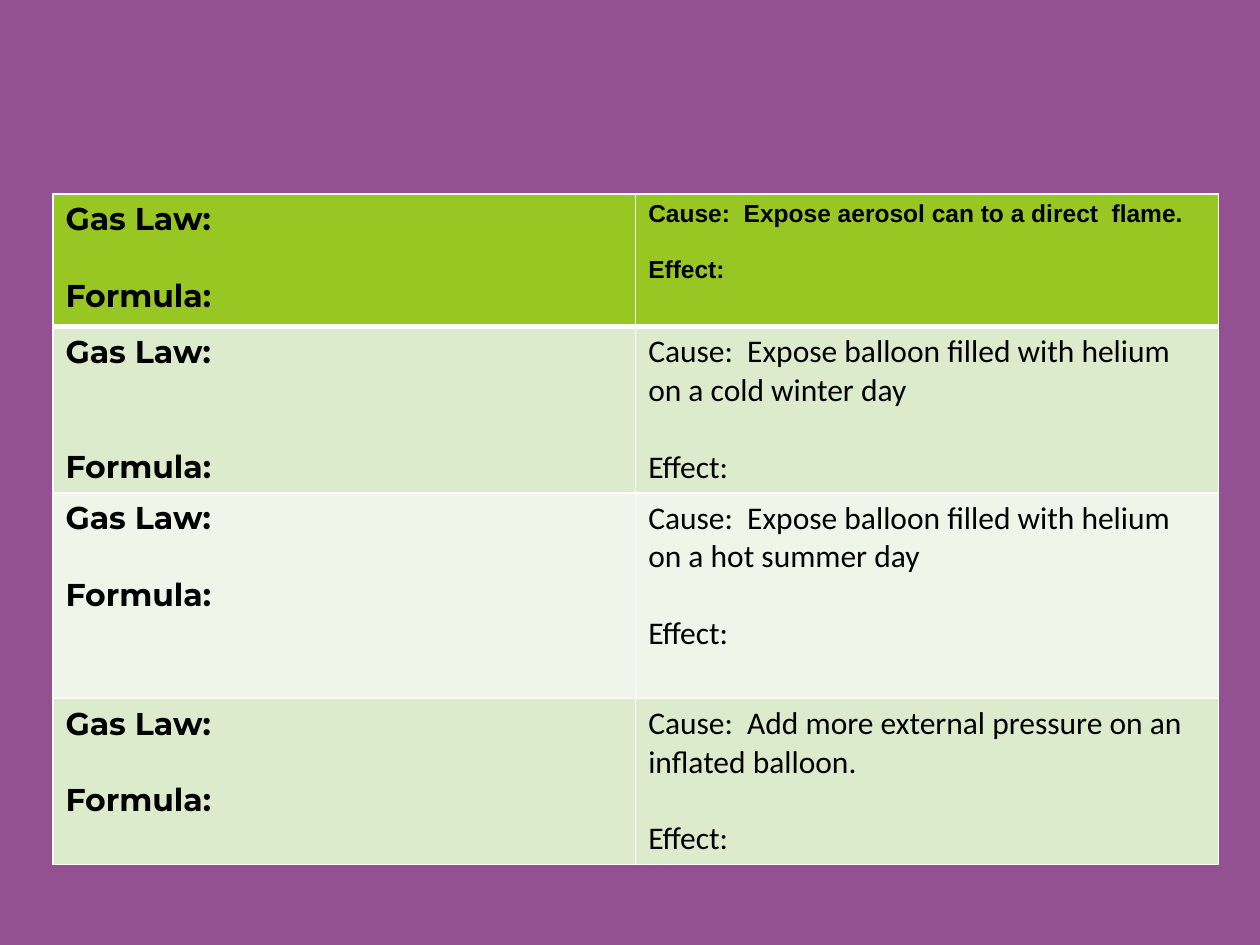
from dataclasses import dataclass

from lxml import etree
from pptx import Presentation
from pptx import util as u
from pptx.dml import color
from pptx.oxml import ns


@dataclass(frozen=True)
class Theme:
    """Colours, fonts and type sizes of the slide."""
    page: str = "945191"
    header: str = "98C723"
    bands: tuple = ("DDEBCD", "EFF5E8")
    ink: str = "000000"
    rule: str = "FFFFFF"
    law_font: str = "Montserrat"
    header_font: str = "Arial"
    case_font: str = "Calibri"
    body_size: int = 18
    header_size: int = 14
    body_line: int = 22
    header_line: int = 16


THEME = Theme()
CASES = [
    (1.05, 1, "Cause:  Expose aerosol can to a direct  flame."),
    (1.32, 2, "Cause:  Expose balloon filled with helium on a cold winter day"),
    (1.63, 1, "Cause:  Expose balloon filled with helium on a hot summer day"),
    (1.32, 1, "Cause:  Add more external pressure on an inflated balloon."),
]


def rgb(value):
    """Turn a hex string into a colour."""
    return color.RGBColor.from_string(value)


def style_cell(cell, fill, bottom):
    """Rule the four sides of a cell and fill it."""
    props = cell._tc.get_or_add_tcPr()
    for side, width in (("L", 1), ("R", 1), ("T", 1), ("B", bottom)):
        line = etree.SubElement(props, ns.qn(f"a:ln{side}"), w=str(u.Pt(width)))
        solid = etree.SubElement(line, ns.qn("a:solidFill"))
        etree.SubElement(solid, ns.qn("a:srgbClr"), val=THEME.rule)
    cell.fill.solid()
    cell.fill.fore_color.rgb = rgb(fill)


def write_pair(cell, lines, font, size, bold, gap):
    """Write two paragraphs set apart by a gap in points."""
    frame = cell.text_frame
    for index, line in enumerate(lines):
        para = frame.add_paragraph() if index else frame.paragraphs[0]
        if index:
            para.space_before = u.Pt(gap)
        span = para.add_run()
        span.text = line
        span.font.name = font
        span.font.size = u.Pt(size)
        span.font.bold = bold
        span.font.color.rgb = rgb(THEME.ink)


def add_case_table(page, left, top, width):
    """Place the gas law table, one row for each case."""
    height = u.Inches(sum(case[0] for case in CASES))
    table = page.shapes.add_table(len(CASES), 2, left, top, width, height).table
    for column in table.columns:
        column.width = width // 2
    for index, (row_height, blank_lines, cause) in enumerate(CASES):
        is_header = index == 0
        table.rows[index].height = u.Inches(row_height)
        fill = THEME.header if is_header else THEME.bands[(index - 1) % 2]
        law, case = table.cell(index, 0), table.cell(index, 1)
        for cell in (law, case):
            style_cell(cell, fill, 3 if is_header else 1)
        write_pair(law, ("Gas Law:", "Formula:"), THEME.law_font,
                   THEME.body_size, True, blank_lines * THEME.body_line)
        font, size, gap = (
            (THEME.header_font, THEME.header_size, THEME.header_line) if is_header
            else (THEME.case_font, THEME.body_size, THEME.body_line))
        write_pair(case, (cause, "Effect:"), font, size, is_header, gap)


def main():
    """Build the deck and save it."""
    deck = Presentation()
    deck.slide_width, deck.slide_height = u.Inches(10), u.Inches(7.5)
    page = deck.slides.add_slide(deck.slide_layouts[6])
    page.background.fill.solid()
    page.background.fill.fore_color.rgb = rgb(THEME.page)
    add_case_table(page, u.Inches(0.42), u.Inches(1.54), u.Inches(9.25))
    deck.save("out.pptx")


if __name__ == "__main__":
    main()
